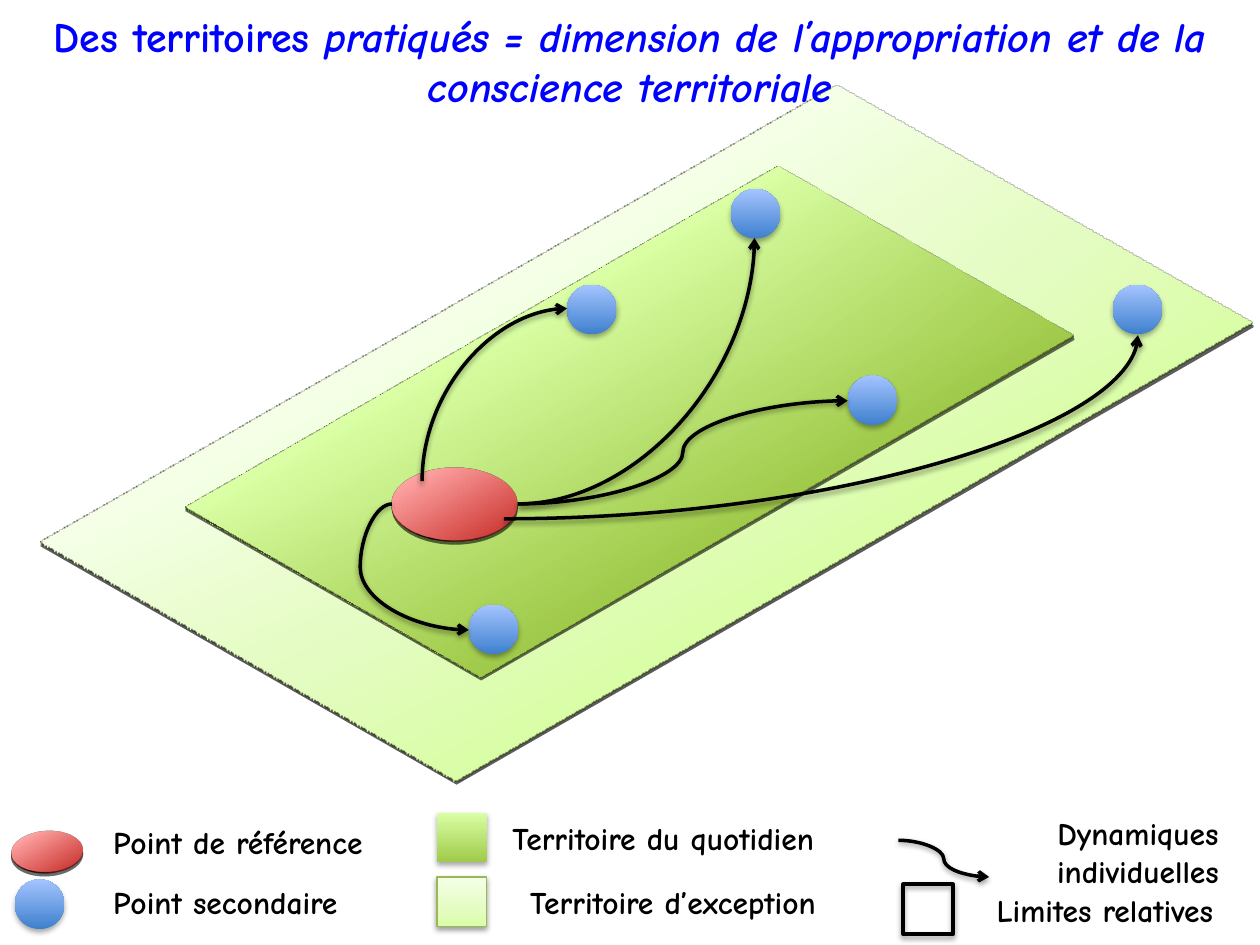
import copy

import pptx
import pptx.dml.color
import pptx.enum.shapes
import pptx.enum.text
import pptx.oxml
import pptx.oxml.ns
import pptx.util

Cm = pptx.util.Cm
Pt = pptx.util.Pt
qn = pptx.oxml.ns.qn
nsdecls = pptx.oxml.ns.nsdecls
RECTANGLE = pptx.enum.shapes.MSO_SHAPE.RECTANGLE
OVAL = pptx.enum.shapes.MSO_SHAPE.OVAL
LEFT = pptx.enum.text.PP_ALIGN.LEFT
CENTER = pptx.enum.text.PP_ALIGN.CENTER
TOP = pptx.enum.text.MSO_ANCHOR.TOP
MIDDLE = pptx.enum.text.MSO_ANCHOR.MIDDLE


def color(hex_text):
    return pptx.dml.color.RGBColor.from_string(hex_text)


def add_text(page, parts, left, top, width, height=1.02, size=18,
             ink="000000", align=LEFT, anchor=TOP):
    """Add a text box; parts is a list of (text, italic) spans."""
    box = page.shapes.add_textbox(Cm(left), Cm(top), Cm(width), Cm(height))
    box.text_frame.word_wrap = True
    box.text_frame.vertical_anchor = anchor
    para = box.text_frame.paragraphs[0]
    para.alignment = align
    for text, italic in parts:
        span = para.add_run()
        span.text = text
        span.font.name = "Comic Neue"
        span.font.size = Pt(size)
        span.font.bold = True
        span.font.italic = italic
        span.font.color.rgb = color(ink)


deck = pptx.Presentation()
deck.slide_width = Cm(25.4)
deck.slide_height = Cm(19.05)
page = deck.slides.add_slide(deck.slide_layouts[6])

# Gradients run from bottom to top: (position, colour)
PALE = [(0, "DAFDA7"), (0.35, "E4FCC2"), (1, "F5FFE7")]
GREEN = [(0, "A0CA4A"), (1, "DAFFA5")]
RED = [(0, "D1403C"), (1, "FFA6A5")]
BLUE = [(0, "3F80CE"), (1, "A4C4FF")]
SOFT, STRONG = (20000, 38000), (23000, 35000)
shadowed = []

# Territories, points and legend keys:
# preset, left, top, width, height, gradient, outline, isometric
figures = [
    (RECTANGLE, 1.68, 2.79, 22.73, 11.86, PALE, ("98B955", 0.75), True),
    (RECTANGLE, 4.24, 4.27, 16.92, 8.43, GREEN, None, True),
    (OVAL, 7.9, 8.89, 2.54, 2.54, RED, None, True),
    (OVAL, 0.2, 16.46, 1.5, 1.4, RED, None, True),
    (RECTANGLE, 8.81, 16.38, 1, 1, GREEN, None, False),
    (RECTANGLE, 8.81, 17.68, 1, 1, PALE, ("98B955", 0.75), False),
    (RECTANGLE, 18.21, 17.83, 1, 1, None, ("000000", 2.25), False),
]
secondary_points = [(14.73, 3.81), (11.43, 5.74), (9.45, 12.19),
                    (17.09, 7.57), (22.43, 5.74), (0.3, 17.73)]
figures += [(OVAL, left, top, 1, 1, BLUE, None, False)
            for left, top in secondary_points]

for preset, left, top, width, height, gradient, outline, isometric in figures:
    shape = page.shapes.add_shape(preset, Cm(left), Cm(top), Cm(width), Cm(height))
    shape.shadow.inherit = False
    if gradient:
        shape.fill.gradient()
        shape.fill.gradient_angle = 90
        stop_list = shape.fill._fill._gradFill.find(qn("a:gsLst"))
        while len(stop_list) < len(gradient):
            stop_list.append(copy.deepcopy(stop_list[-1]))
        for stop, (position, hex_text) in zip(shape.fill.gradient_stops, gradient):
            stop.position = position
            stop.color.rgb = color(hex_text)
    else:
        shape.fill.background()
    if outline:
        shape.line.color.rgb = color(outline[0])
        shape.line.width = Pt(outline[1])
    else:
        shape.line.fill.background()
    if isometric:
        properties = shape._element.spPr
        properties.append(pptx.oxml.parse_xml(
            f'<a:scene3d {nsdecls("a")}><a:camera prst="isometricTopUp"/>'
            '<a:lightRig rig="threePt" dir="t"/></a:scene3d>'))
        properties.append(pptx.oxml.parse_xml(
            f'<a:sp3d {nsdecls("a")} extrusionH="12700"/>'))
    shadowed.append((shape, SOFT if outline else STRONG))

# Movements: start, end, preset, adjustment, quarter turn
movements = [
    ((7.9, 10.16), (9.45, 12.7), "curvedConnector3", -41200, False),
    ((8.51, 9.7), (11.43, 6.22), "curvedConnector2", None, True),
    ((10.44, 10.16), (17.09, 8.08), "curvedConnector3", None, False),
    ((10.44, 10.16), (15.21, 4.8), "curvedConnector2", None, False),
    ((10.16, 10.46), (22.94, 6.76), "curvedConnector2", None, False),
    ((18.11, 16.94), (19.94, 17.68), "curvedConnector3", None, False),
]
for start, end, preset, adjustment, turned in movements:
    if turned:  # frame before its quarter turn about the centre
        center_x, center_y = (start[0] + end[0]) / 2, (start[1] + end[1]) / 2
        start, end = [(center_x + y - center_y, center_y - x + center_x)
                      for x, y in (start, end)]
    arrow = page.shapes.add_connector(
        pptx.enum.shapes.MSO_CONNECTOR.CURVE,
        Cm(start[0]), Cm(start[1]), Cm(end[0]), Cm(end[1]))
    arrow.line.color.rgb = color("000000")
    arrow.line.width = Pt(2)
    arrow.line._get_or_add_ln().append(
        pptx.oxml.parse_xml(f'<a:tailEnd {nsdecls("a")} type="arrow"/>'))
    properties = arrow._element.spPr
    geometry = properties.find(qn("a:prstGeom"))
    geometry.set("prst", preset)
    if adjustment is not None:
        geometry.find(qn("a:avLst")).append(pptx.oxml.parse_xml(
            f'<a:gd {nsdecls("a")} name="adj1" fmla="val {adjustment}"/>'))
    if turned:
        properties.find(qn("a:xfrm")).set("rot", "5400000")
    properties.append(pptx.oxml.parse_xml(f'<a:effectLst {nsdecls("a")}/>'))
    shadowed.append((arrow, SOFT))

# Soft shadow below every shape and arrow
for item, (distance, opacity) in shadowed:
    item._element.spPr.find(qn("a:effectLst")).append(pptx.oxml.parse_xml(
        f'<a:outerShdw {nsdecls("a")} blurRad="40000" dist="{distance}" '
        'dir="5400000" rotWithShape="0"><a:srgbClr val="000000">'
        f'<a:alpha val="{opacity}"/></a:srgbClr></a:outerShdw>'))

# Legend labels
for label, left, top, width in [
    ("Point de référence", 2.03, 16.46, 7.42),
    ("Point secondaire", 2.03, 17.68, 7.42),
    ("Territoire du quotidien", 10.08, 16.38, 7.42),
    ("Territoire d’exception", 10.44, 17.68, 7.42),
    ("Limites relatives", 19.84, 17.83, 5.5),
]:
    add_text(page, [(label, False)], left, top, width)
add_text(page, [("Dynamiques individuelles", False)], 20.55, 16.28, 4.78,
         height=1.8, align=CENTER)

# Title
add_text(page, [("Des territoires ", False),
                ("pratiqués = dimension de l’appropriation et de la "
                 "conscience territoriale", True)],
         0, 0.05, 25.4, height=2.34, size=24, ink="0000FF",
         align=CENTER, anchor=MIDDLE)

deck.save("out.pptx")
